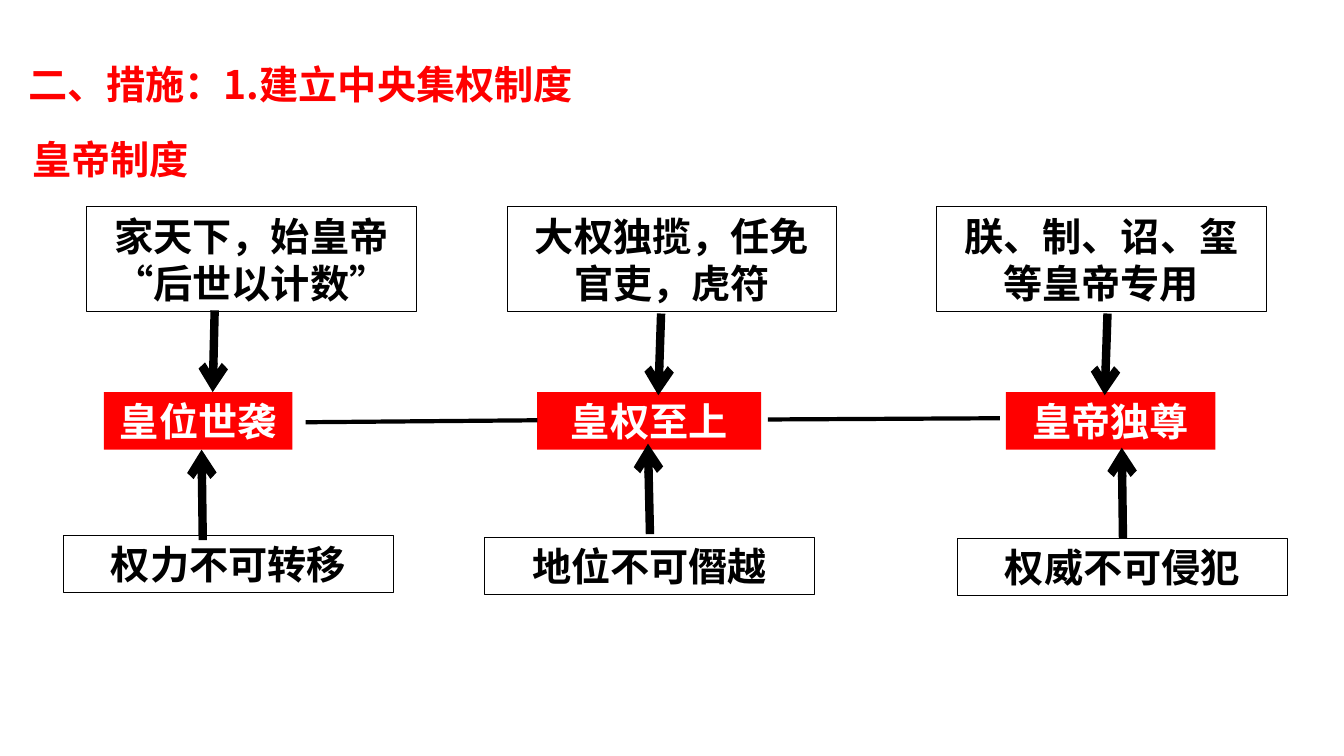
from lxml.etree import SubElement
from pptx import Presentation
from pptx.dml.color import RGBColor
from pptx.enum.shapes import MSO_CONNECTOR as Link, MSO_SHAPE as Shape
from pptx.enum.text import MSO_ANCHOR as Anchor, PP_ALIGN as Align
from pptx.oxml.ns import qn
from pptx.util import Cm, Pt

RED, BLACK, WHITE = "FF0000", "000000", "FFFFFF"
CJK = "Noto Sans CJK SC"
BOX_W, ROW_H, NOTE_H = 8.31, 1.45, 2.64

# Each column: (left, text) of the note, (left, width, text) of the core idea,
# (left, top, text) of the rule below, and the start and end of the arrow up.
COLUMNS = [
    ((2.18, "家天下，始皇帝\n“后世以计数”"), (2.62, 4.75, "皇位世袭"),
     (1.6, 13.49, "权力不可转移"), (5.11, 13.61, 5.08, 11.33)),
    ((12.78, "大权独揽，任免官吏，虎符"), (13.54, 5.64, "皇权至上"),
     (12.22, 13.54, "地位不可僭越"), (16.38, 13.46, 16.33, 11.18)),
    ((23.6, "朕、制、诏、玺等皇帝专用"), (25.35, 5.28, "皇帝独尊"),
     (24.13, 13.56, "权威不可侵犯"), (28.3, 13.56, 28.27, 11.28)),
]
DOWN = [(5.41, 7.82, 5.36, 9.88), (16.66, 7.9, 16.59, 9.96),
        (27.91, 7.9, 27.84, 9.96)]
LINKS = [(7.7, 10.64, 13.54, 10.59), (19.35, 10.57, 25.2, 10.54)]


def color(code):
    return RGBColor.from_string(code)


def write(frame, text, code, face, align, anchor=Anchor.TOP, space=1.0):
    look = {"word_wrap": True, "vertical_anchor": anchor,
            "margin_left": Cm(0.25), "margin_right": Cm(0.25),
            "margin_top": Cm(0.13), "margin_bottom": Cm(0.13)}
    for key, value in look.items():
        setattr(frame, key, value)
    for num, line in enumerate(text.split("\n")):
        para = frame.add_paragraph() if num else frame.paragraphs[0]
        para.alignment, para.line_spacing = align, space
        run = para.add_run()
        run.text = line
        for key, value in {"size": Pt(28), "bold": True, "name": face}.items():
            setattr(run.font, key, value)
        run.font.color.rgb = color(code)
        SubElement(run.font._element, qn("a:ea"), typeface=CJK)


def add_box(slide, place, text, ink=BLACK, fill=None):
    """Draw a filled label, or an outlined one when there is no fill."""
    box = slide.shapes.add_shape(Shape.RECTANGLE, *map(Cm, place))
    box.shadow.inherit = False
    if fill:
        box.fill.solid()
        box.fill.fore_color.rgb = color(fill)
        box.line.fill.background()
    else:
        box.fill.background()
        box.line.color.rgb = color(BLACK)
        box.line.width = Pt(0.75)
    write(box.text_frame, text, ink, "Calibri", Align.CENTER, Anchor.MIDDLE)


def add_line(slide, ends, width, arrow=False):
    line = slide.shapes.add_connector(Link.STRAIGHT, *map(Cm, ends))
    line.line.color.rgb = color(BLACK)
    line.line.width = Pt(width)
    if arrow:
        SubElement(line.line._get_or_add_ln(), qn("a:tailEnd"), type="arrow")
    SubElement(line._element.spPr, qn("a:effectLst"))


def add_title(slide, place, text):
    title = slide.shapes.title
    for key, value in zip(("left", "top", "width", "height"), place):
        setattr(title, key, Cm(value))
    write(title.text_frame, text, RED, CJK, Align.LEFT)


def add_text(slide, place, text):
    box = slide.shapes.add_textbox(*map(Cm, place))
    write(box.text_frame, text, RED, CJK, Align.LEFT, space=1.1)


def main():
    deck = Presentation()
    deck.slide_width, deck.slide_height = Cm(33.87), Cm(19.05)
    slide = deck.slides.add_slide(deck.slide_layouts[5])
    add_title(slide, (0.46, 1.4, 24.71, 2.64), "二、措施：1.建立中央集权制度")
    add_text(slide, (0.56, 3.15, 7.14, 1.57), "皇帝制度")
    for (x, note), (left, width, core), (low, top, rule), _ in COLUMNS:
        add_box(slide, (x, 5.21, BOX_W, NOTE_H), note)
        add_box(slide, (left, 9.88, width, ROW_H), core, WHITE, RED)
        add_box(slide, (low, top, BOX_W, ROW_H), rule)
    for ends in DOWN + [column[-1] for column in COLUMNS]:
        add_line(slide, ends, 6, arrow=True)
    for ends in LINKS:
        add_line(slide, ends, 3)
    deck.save("out.pptx")


if __name__ == "__main__":
    main()
